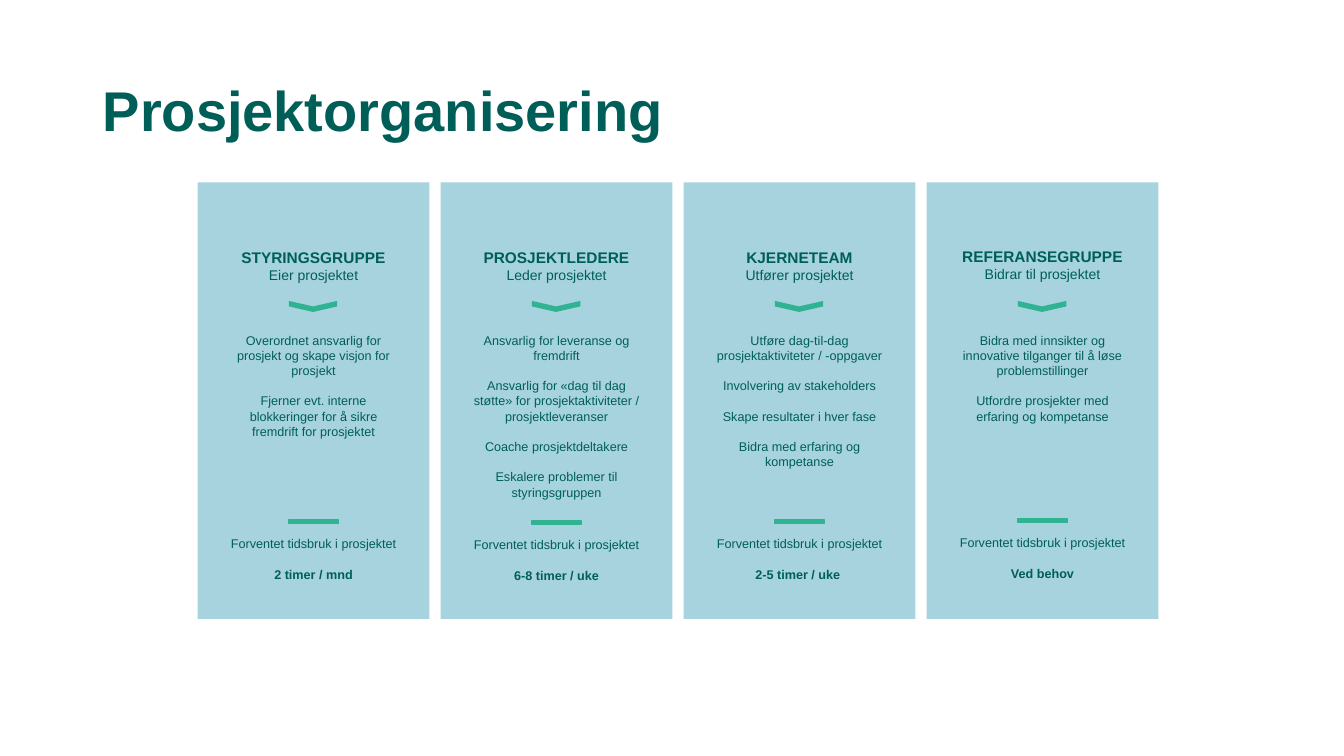
from pptx import Presentation
from pptx.dml.color import RGBColor
from pptx.enum.shapes import MSO_SHAPE
from pptx.enum.text import MSO_ANCHOR, MSO_AUTO_SIZE, PP_ALIGN
from pptx.util import Inches, Pt

DARK_GREEN = RGBColor(0x00, 0x5E, 0x58)
MINT = RGBColor(0x30, 0xB3, 0x93)
LIGHT_BLUE = RGBColor(0xA6, 0xD3, 0xDD)

CARD_LEFT, CARD_TOP, CARD_WIDTH, CARD_HEIGHT = 1.96, 1.81, 2.3, 4.33
CARD_PITCH = 2.41
TEXT_INDENT, TEXT_WIDTH = 0.22, 1.86
BLANK_LINE = 10.9

CARDS = [
    ("STYRINGSGRUPPE", "Eier prosjektet",
     ["Overordnet ansvarlig for prosjekt og skape visjon for prosjekt",
      "Fjerner evt. interne blokkeringer for å sikre fremdrift for prosjektet"],
     "2 timer / mnd", 0),
    ("PROSJEKTLEDERE", "Leder prosjektet",
     ["Ansvarlig for leveranse og fremdrift",
      "Ansvarlig for «dag til dag støtte» for prosjektaktiviteter / prosjektleveranser",
      "Coache prosjektdeltakere",
      "Eskalere problemer til styringsgruppen"],
     "6-8 timer / uke", 0.01),
    ("KJERNETEAM", "Utfører prosjektet",
     ["Utføre dag-til-dag prosjektaktiviteter / -oppgaver",
      "Involvering av stakeholders",
      "Skape resultater i hver fase",
      "Bidra med erfaring og kompetanse"],
     "2-5 timer / uke ", 0),
    ("REFERANSEGRUPPE", "Bidrar til prosjektet",
     ["Bidra med innsikter og innovative tilganger til å løse problemstillinger",
      "Utfordre prosjekter med erfaring og kompetanse"],
     "Ved behov", -0.01),
]


def apply_format(target, values):
    """Set every attribute named in a dict of format values."""
    for name, value in values.items():
        setattr(target, name, value)


def style_font(font, size, bold=False):
    """Give a font the slide's typeface and colour."""
    apply_format(font, {"name": "Arial", "size": Pt(size), "bold": bold})
    font.color.rgb = DARK_GREEN


def add_filled(group, kind, left, top, width, height, color):
    """Add a plain filled shape without outline."""
    shape = group.shapes.add_shape(
        kind, Inches(left), Inches(top), Inches(width), Inches(height))
    shape.shadow.inherit = False
    shape.fill.solid()
    shape.fill.fore_color.rgb = color
    shape.line.fill.background()
    return shape


def add_centred_text(group, left, top, height, lines, gap=0, anchor=MSO_ANCHOR.TOP):
    """Add a text box with one centred paragraph per (text, size, bold) line."""
    box = group.shapes.add_textbox(
        Inches(left), Inches(top), Inches(TEXT_WIDTH), Inches(height))
    frame = box.text_frame
    apply_format(frame, {"word_wrap": True, "vertical_anchor": anchor,
                         "auto_size": MSO_AUTO_SIZE.SHAPE_TO_FIT_TEXT})
    for index, (text, size, bold) in enumerate(lines):
        para = frame.add_paragraph() if index else frame.paragraphs[0]
        para.alignment = PP_ALIGN.CENTER
        if index and gap:
            para.space_before = Pt(gap)
        span = para.add_run()
        span.text = text
        style_font(span.font, size, bold)


def add_card(page, column, role, summary, duties, time, nudge):
    """Add one grouped role card in the given column."""
    group = page.shapes.add_group_shape()
    left = CARD_LEFT + column * CARD_PITCH
    text_left = left + TEXT_INDENT
    add_filled(group, MSO_SHAPE.RECTANGLE, left, CARD_TOP, CARD_WIDTH, CARD_HEIGHT, LIGHT_BLUE)
    chevron = add_filled(group, MSO_SHAPE.CHEVRON, left + 1.09, 2.8, 0.11, 0.48, MINT)
    chevron.rotation = 90
    add_centred_text(group, text_left, 2.41 + min(nudge, 0), 0.45,
                     [(role, 11, True), (summary, 10, False)], anchor=MSO_ANCHOR.MIDDLE)
    add_centred_text(group, text_left, 3.25, 1.16,
                     [(duty, 9, False) for duty in duties], BLANK_LINE)
    bar = add_filled(group, MSO_SHAPE.MATH_MINUS, left + 0.82, 5.09 + nudge, 0.66, 0.17, MINT)
    bar.line.color.rgb = MINT
    bar.line.width = Pt(1)
    add_centred_text(group, text_left, 5.27 + nudge, 0.56,
                     [("Forventet tidsbruk i prosjektet", 9, False), (time, 9, True)],
                     BLANK_LINE)


def set_title(page, text):
    """Place and format the title placeholder."""
    title = page.shapes.title
    apply_format(title, {"left": Inches(0.92), "top": Inches(0.66),
                         "width": Inches(11.5), "height": Inches(0.93)})
    title.text_frame.text = text
    apply_format(title.text_frame, {"vertical_anchor": MSO_ANCHOR.MIDDLE, "word_wrap": True})
    para = title.text_frame.paragraphs[0]
    apply_format(para, {"alignment": PP_ALIGN.LEFT, "line_spacing": 0.9})
    style_font(para.runs[0].font, 40, True)


def main():
    """Build and save the project organisation slide."""
    deck = Presentation()
    apply_format(deck, {"slide_width": Inches(13.33), "slide_height": Inches(7.5)})
    page = deck.slides.add_slide(deck.slide_layouts[5])
    set_title(page, "Prosjektorganisering")
    for column, card in enumerate(CARDS):
        add_card(page, column, *card)
    deck.save("out.pptx")


if __name__ == "__main__":
    main()
